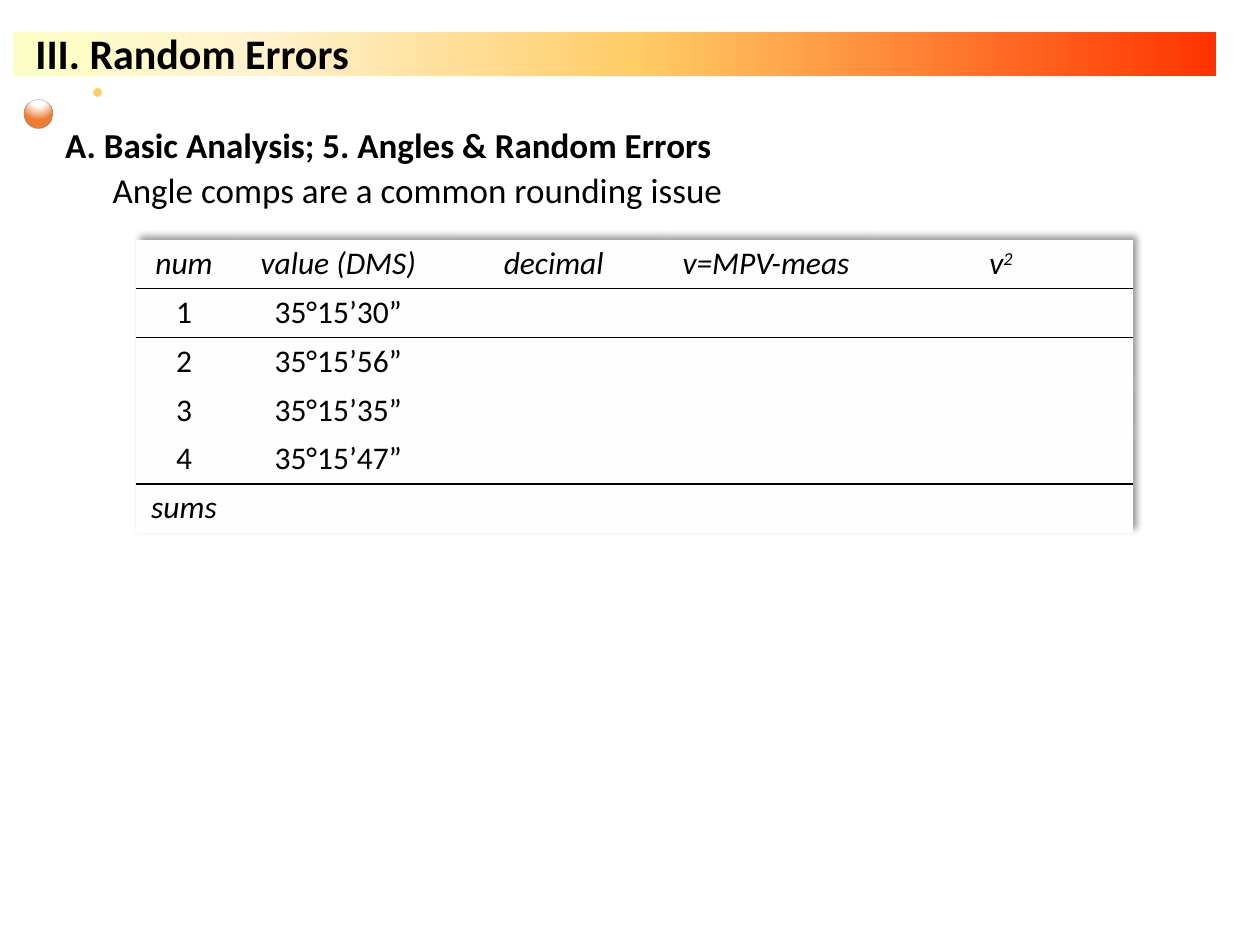
from lxml import etree
from pptx import Presentation
from pptx.dml.color import RGBColor
from pptx.enum.shapes import MSO_SHAPE as Shape
from pptx.enum.text import MSO_ANCHOR as Anchor, MSO_AUTO_SIZE as AutoSize, PP_ALIGN as Align
from pptx.oxml import parse_xml
from pptx.oxml.ns import qn
from pptx.util import Pt

NS = 'xmlns:a="http://schemas.openxmlformats.org/drawingml/2006/main"'
NO_STYLE = "{2D5ABB26-0587-4C30-8999-92F81FD0307C}"

TITLE = "III. Random Errors"
HEADING = "A. Basic Analysis; 5. Angles & Random Errors"
REMARK = "Angle comps are a common rounding issue"
HEADERS = ["num", "value (DMS)", "decimal", "v=MPV-meas", "v"]
ANGLES = ["35°15’30”", "35°15’56”", "35°15’35”", "35°15’47”"]
ROWS = [HEADERS, *([str(n), angle] for n, angle in enumerate(ANGLES, 1)), ["sums"]]
COLUMN_WIDTHS = [54.7, 121.7, 124.5, 118.1, 150.5]
ROW_HEIGHT = 27.9
BAND_STOPS = [(0, "FDFEC6"), (21, "FFF2CC"), (52, "FFCC66"), (100, "FF3300")]
BALL_STOPS = [(0, "FFFFFF"), (35, "FFFFFF"), (100, "ED7D31")]
ACROSS = '<a:lin ang="0" scaled="0"/>'
FROM_TOP = '<a:path path="circle"><a:fillToRect l="50000" t="-80000" r="50000" b="180000"/></a:path>'


def color(value):
    return RGBColor.from_string(value)


def add_text(para, text, size=18, bold=False, italic=False, raised=False):
    span = para.add_run()
    span.text = text
    font = span.font
    font.name, font.size, font.bold, font.italic = "Calibri", Pt(size), bold, italic
    font.color.rgb = color("000000")
    if raised:
        font._element.set("baseline", "30000")


def add_figure(page, kind, left, top, width, height, fill="FFFFFF"):
    figure = page.shapes.add_shape(kind, Pt(left), Pt(top), Pt(width), Pt(height))
    figure.shadow.inherit = False
    figure.fill.solid()
    figure.fill.fore_color.rgb = color(fill)
    figure.line.fill.background()
    return figure


def set_gradient(figure, stops, direction):
    marks = "".join(f'<a:gs pos="{pos * 1000}"><a:srgbClr val="{value}"/></a:gs>' for pos, value in stops)
    solid = figure.element.spPr.find(qn("a:solidFill"))
    solid.getparent().replace(solid, parse_xml(
        f'<a:gradFill {NS} rotWithShape="1"><a:gsLst>{marks}</a:gsLst>{direction}</a:gradFill>'))


def set_border(cell, side):
    border = parse_xml(f'<a:{side} {NS} w="12700"><a:solidFill><a:srgbClr val="000000"/></a:solidFill></a:{side}>')
    cell._tc.get_or_add_tcPr().insert(0, border)


def add_header(page):
    title = page.shapes.title
    band = add_figure(page, Shape.RECTANGLE, 7.2, 18, 687.6, 25.2)
    set_gradient(band, BAND_STOPS, ACROSS)
    title.element.addprevious(band.element)
    title.left, title.top, title.width, title.height = Pt(13), Pt(12.2), Pt(525), Pt(36)
    frame = title.text_frame
    frame.auto_size = AutoSize.NONE
    frame.vertical_anchor = Anchor.MIDDLE
    frame.paragraphs[0].alignment = Align.LEFT
    add_text(frame.paragraphs[0], TITLE, size=24, bold=True)

    ball = add_figure(page, Shape.OVAL, 13.7, 56.9, 16.6, 16.6)
    set_gradient(ball, BALL_STOPS, FROM_TOP)
    ball.line.color.rgb = color("3B6BC1")
    ball.line.width = Pt(0.16)
    tint = ball.line._ln.find(".//" + qn("a:srgbClr"))
    etree.SubElement(tint, qn("a:alpha")).set("val", "60000")
    add_figure(page, Shape.OVAL, 53.3, 50.4, 5, 5, fill="FFCC66")


def add_body(page):
    box = page.shapes.add_textbox(Pt(30.2), Pt(69.8), Pt(620.6), Pt(422))
    frame = box.text_frame
    frame.word_wrap = True
    heading = frame.paragraphs[0]
    add_text(heading, HEADING, size=20, bold=True)
    remark = frame.add_paragraph()
    add_text(remark, REMARK, size=20)
    remark.space_before = Pt(3.8)
    remark._p.get_or_add_pPr().set("marL", str(Pt(27)))
    for para in (heading, remark):
        para.line_spacing = 0.9


def add_angle_table(page):
    holder = page.shapes.add_table(len(ROWS), len(HEADERS), Pt(77.8), Pt(137),
                                   Pt(sum(COLUMN_WIDTHS)), Pt(ROW_HEIGHT * len(ROWS)))
    table = holder.table
    table.first_row = table.horz_banding = False
    properties = table._tbl.tblPr
    properties.find(qn("a:tableStyleId")).text = NO_STYLE
    properties.insert(0, parse_xml(
        f'<a:effectLst {NS}><a:outerShdw blurRad="50800" dist="38100" dir="18900000" algn="bl" rotWithShape="0">'
        '<a:prstClr val="black"><a:alpha val="40000"/></a:prstClr></a:outerShdw></a:effectLst>'))
    for column, width in zip(table.columns, COLUMN_WIDTHS):
        column.width = Pt(width)
    last = len(ROWS) - 1
    for r, texts in enumerate(ROWS):
        table.rows[r].height = Pt(ROW_HEIGHT)
        for c in range(len(HEADERS)):
            cell = table.cell(r, c)
            cell.margin_left = cell.margin_right = cell.margin_top = cell.margin_bottom = Pt(2.8)
            cell.fill.solid()
            cell.fill.fore_color.rgb = color("FEFEFE")
            para = cell.text_frame.paragraphs[0]
            para.alignment = Align.CENTER
            if c < len(texts):
                add_text(para, texts[c], italic=r in (0, last))
            if texts[c:] == ["v"]:
                add_text(para, "2", italic=True, raised=True)
            if r == 0:
                set_border(cell, "lnB")
            elif r in (1, last):
                set_border(cell, "lnT")


def main():
    deck = Presentation()
    deck.slide_width, deck.slide_height = Pt(720), Pt(540)
    page = deck.slides.add_slide(deck.slide_layouts[5])
    add_header(page)
    add_body(page)
    add_angle_table(page)
    deck.save("out.pptx")


if __name__ == "__main__":
    main()
